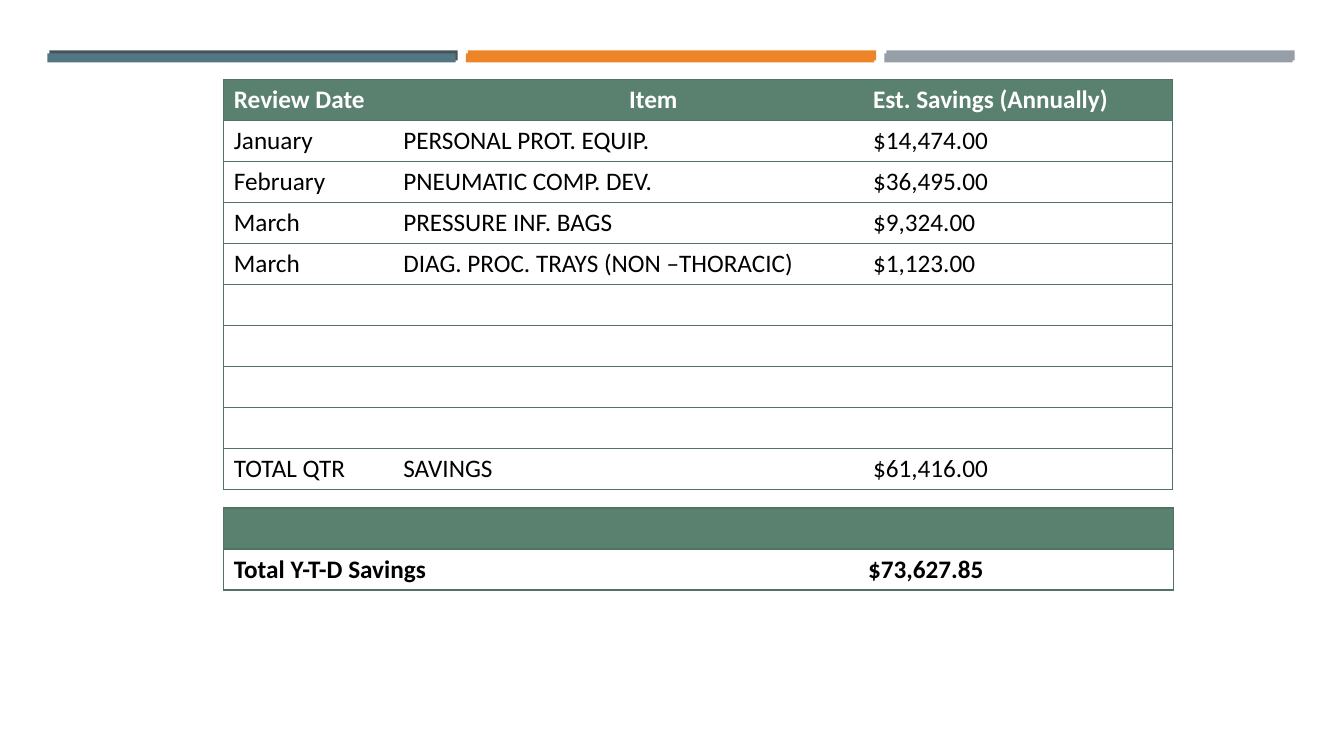
from pptx import Presentation
from pptx.dml.color import RGBColor as RGB
from pptx.enum.shapes import MSO_SHAPE as Shape
from pptx.enum.text import PP_ALIGN as Align
from pptx.oxml import parse_xml
from pptx.oxml.ns import nsdecls
from pptx.util import Inches, Pt

COLORS = {
    "slate": "465359", "blue": "537685", "orange": "ED8428", "gray": "969FA7",
    "green": "5A8070", "rule": "517366", "white": "FFFFFF", "black": "000000",
}


class SavingsSlide:
    """Draws bars and tables on one slide in a shared style."""

    font_name = "Calibri"
    font_size = Pt(18)

    def __init__(self, slide):
        self.shapes = slide.shapes

    def color(self, name):
        return RGB.from_string(COLORS[name])

    def bar(self, left, top, width, height, color):
        bar = self.shapes.add_shape(
            Shape.RECTANGLE, Inches(left), Inches(top), Inches(width), Inches(height))
        bar.shadow.inherit = False
        bar.fill.solid()
        bar.fill.fore_color.rgb = self.color(color)
        bar.line.fill.background()

    def border(self, cell, side, visible):
        paint = (f'<a:solidFill><a:srgbClr val="{COLORS["rule"]}"/></a:solidFill>'
                 if visible else "<a:noFill/>")
        cell._tc.get_or_add_tcPr().append(parse_xml(
            f'<a:ln{side} {nsdecls("a")} w="{Pt(1)}">{paint}</a:ln{side}>'))

    def cell(self, cell, text, is_header, bold, is_first, is_last):
        for side, visible in (("L", is_first), ("R", is_last), ("T", True), ("B", True)):
            self.border(cell, side, visible)
        cell.fill.solid()
        cell.fill.fore_color.rgb = self.color("green" if is_header else "white")
        cell.text = text
        paragraph = cell.text_frame.paragraphs[0]
        paragraph.font.name = self.font_name
        paragraph.font.size = self.font_size
        paragraph.font.bold = bold
        paragraph.font.color.rgb = self.color("white" if is_header else "black")

    def table(self, left, top, widths, row_height, rows, bold_body=False):
        table = self.shapes.add_table(
            len(rows), len(widths), Inches(left), Inches(top),
            Inches(sum(widths)), Inches(row_height * len(rows))).table
        table.horz_banding = False
        for column, width in zip(table.columns, widths):
            column.width = Inches(width)
        for r, row in enumerate(rows):
            table.rows[r].height = Inches(row_height)
            for c, text in enumerate(row):
                self.cell(table.cell(r, c), text, r == 0, r == 0 or bold_body,
                          c == 0, c == len(widths) - 1)
        return table

    def center_indented(self, cell, indent):
        paragraph = cell.text_frame.paragraphs[0]
        paragraph.alignment = Align.CENTER
        paragraph.level = 1
        properties = paragraph._p.get_or_add_pPr()
        properties.set("marL", str(Inches(indent)))
        properties.set("indent", "0")


def main():
    deck = Presentation()
    deck.slide_width, deck.slide_height = Inches(13.33), Inches(7.5)
    page = SavingsSlide(deck.slides.add_slide(deck.slide_layouts[6]))

    bar_rows = [
        (0.49, 0.5, 0.1, ("slate", "orange", "gray")),
        (0.47, 0.53, 0.09, ("blue", "orange", "gray")),
    ]
    for left, top, height, colors in bar_rows:
        for i, color in enumerate(colors):
            page.bar(left + i * 4.15, top, 4.05, height, color)

    blank = ("", "", "")
    reviews = [
        ("Review Date", "Item", "Est. Savings (Annually)"),
        ("January", "PERSONAL PROT. EQUIP.", "$14,474.00"),
        ("February", "PNEUMATIC COMP. DEV.", "$36,495.00"),
        ("March", "PRESSURE INF. BAGS", "$9,324.00"),
        ("March", "DIAG. PROC. TRAYS (NON –THORACIC)", "$1,123.00"),
        *[blank] * 4,
        ("TOTAL QTR", "SAVINGS", "$61,416.00"),
    ]
    quarter = page.table(2.22, 0.79, (1.68, 4.66, 3.07), 0.407, reviews)
    page.center_indented(quarter.cell(0, 1), 0.5)

    year_to_date = [blank, ("Total Y-T-D Savings", "", "$73,627.85")]
    page.table(2.22, 5.04, (3.14, 3.15, 3.13), 0.407, year_to_date, bold_body=True)

    deck.save("out.pptx")


if __name__ == "__main__":
    main()
